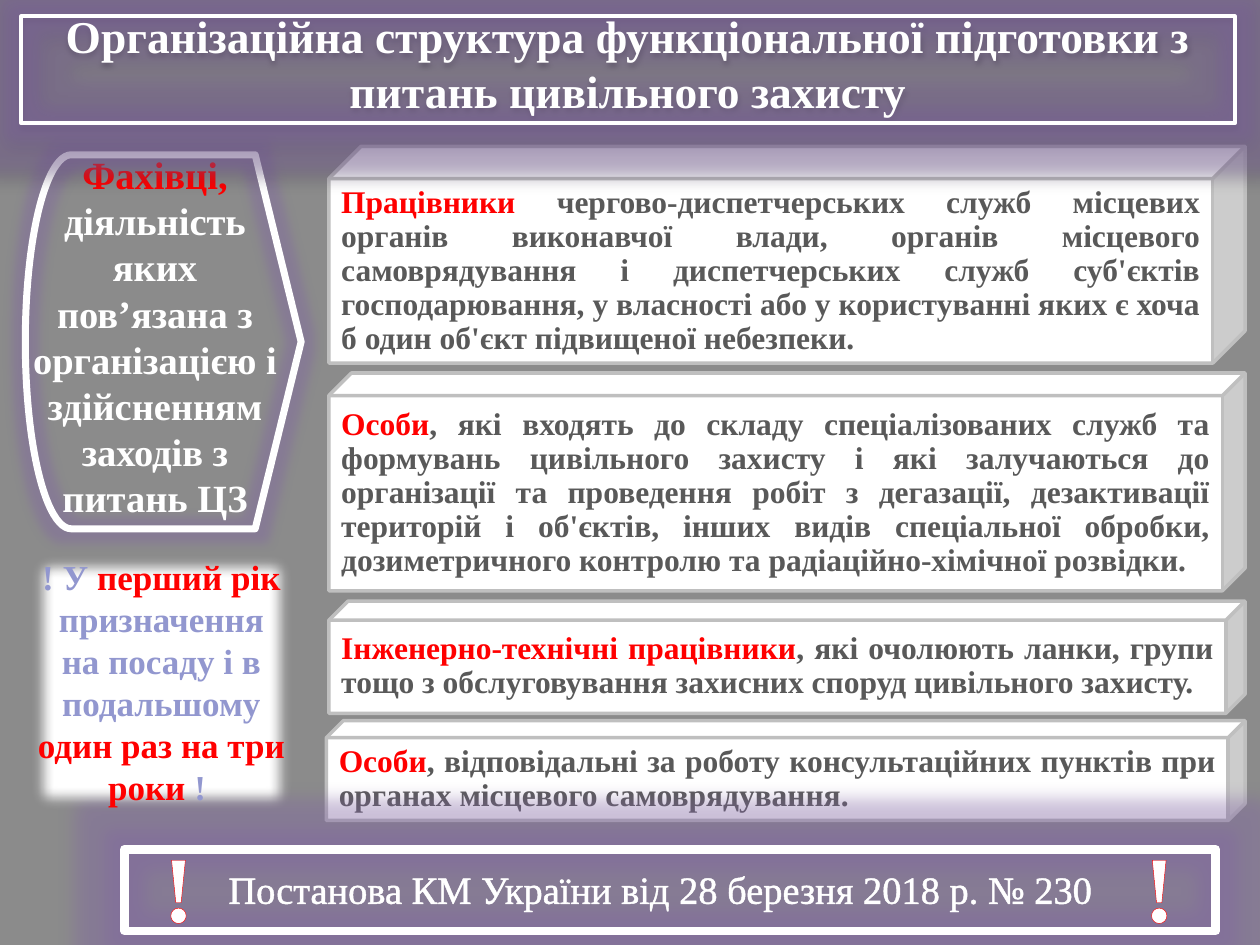
from lxml import etree
from pptx import Presentation
from pptx import util as u
from pptx.dml.color import RGBColor
from pptx.enum import shapes, text
from pptx.oxml.ns import qn

WHITE, RED, GREY, LILAC = "FFFFFF", "FF0000", "595959", "9297CF"
KIND = shapes.MSO_SHAPE
CENTER, JUSTIFY = text.PP_ALIGN.CENTER, text.PP_ALIGN.JUSTIFY
TOP, MIDDLE, BOTTOM = text.MSO_ANCHOR.TOP, text.MSO_ANCHOR.MIDDLE, text.MSO_ANCHOR.BOTTOM
color = RGBColor.from_string

deck = Presentation()
deck.slide_width, deck.slide_height = u.Cm(25.4), u.Cm(19.05)
page = deck.slides.add_slide(deck.slide_layouts[6])
page.background.fill.solid()
page.background.fill.fore_color.rgb = color("8B8B8B")


def add_box(kind, place, line, width, fill=None, effect=None, **values):
    box = page.shapes.add_shape(kind, *[u.Cm(n) for n in place])
    box.shadow.inherit = False
    if fill:
        box.fill.solid()
        box.fill.fore_color.rgb = color(fill)
    else:
        box.fill.background()
    box.line.color.rgb = color(line)
    box.line.width = u.Pt(width)
    if effect:
        effects = box._element.spPr.find(qn("a:effectLst"))
        node = etree.SubElement(effects, qn("a:" + effect), {k: str(v) for k, v in values.items()})
        if effect == "glow":
            tint = etree.SubElement(node, qn("a:srgbClr"), val="8064A2")
            etree.SubElement(tint, qn("a:alpha"), val="40000")
    return box


def write(box, runs, size, bold=True, align=CENTER, anchor=TOP, spacing=None, outline=None):
    frame = box.text_frame
    frame.word_wrap = True
    frame.vertical_anchor = anchor
    para = frame.paragraphs[0]
    para.alignment = align
    para.line_spacing = spacing
    for words, shade in runs:
        span = para.add_run()
        span.text = words
        span.font.name = "Times New Roman"
        span.font.size = u.Pt(size)
        span.font.bold = bold
        span.font.color.rgb = color(shade)
        if outline:
            edge = etree.Element(qn("a:ln"), w="12700")
            paint = etree.SubElement(edge, qn("a:solidFill"))
            etree.SubElement(paint, qn("a:srgbClr"), val=outline)
            span.font._element.insert(0, edge)


arrow = add_box(KIND.FLOWCHART_DISPLAY, (0.51, 3.12, 5.56, 7.54), WHITE, 4, effect="glow", rad=139700)
arrow.rotation = 180

groups = [
    ((6.63, 2.95, 18.47, 4.37), 0.149, "Працівники",
     " чергово-диспетчерських служб місцевих органів виконавчої влади, органів місцевого "
     "самоврядування і диспетчерських служб суб'єктів господарювання, у власності або у "
     "користуванні яких є хоча б один об'єкт підвищеної небезпеки."),
    ((6.63, 7.52, 18.47, 4.39), 0.104, "Особи",
     ", які входять до складу спеціалізованих служб та формувань цивільного захисту і які "
     "залучаються до організації та проведення робіт з дегазації, дезактивації територій і "
     "об'єктів, інших видів спеціальної обробки, дозиметричного контролю та "
     "радіаційно-хімічної розвідки."),
    ((6.63, 12.12, 18.47, 2.26), 0.17, "Інженерно-технічні працівники",
     ", які очолюють ланки, групи тощо з обслуговування захисних споруд цивільного захисту."),
    ((6.58, 14.53, 18.52, 2.01), 0.17, "Особи",
     ", відповідальні за роботу консультаційних пунктів при органах місцевого самоврядування."),
]
for place, depth, lead, rest in groups:
    cube = add_box(KIND.CUBE, place, "BFBFBF", 2, WHITE)
    cube.adjustments[0] = depth
    write(cube, [(lead, RED), (rest, GREY)], 18, align=JUSTIFY, anchor=MIDDLE, spacing=0.9)

add_box(KIND.RECTANGLE, (2.51, 17.12, 22, 1.65), WHITE, 5, effect="glow", rad=228600)

labels = [
    ((0.28, 2.92, 5.69, 7.77), 22, True, None,
     [("Фахівці, ", RED),
      ("діяльність яких пов’язана з організацією і здійсненням заходів з питань ЦЗ", WHITE)]),
    ((3.15, 17.32, 20.32, 1.19), 22, False, WHITE,
     [("Постанова КМ України від 28 березня 2018 р. № 230", WHITE)]),
    ((2.51, 16.56, 2.18, 2.57), 54, True, RED, [("!", WHITE)]),
    ((22.28, 16.56, 2.18, 2.57), 54, True, RED, [("!", WHITE)]),
]
for place, size, bold, outline, runs in labels:
    label = page.shapes.add_textbox(*[u.Cm(n) for n in place])
    write(label, runs, size, bold, outline=outline)

title = add_box(KIND.RECTANGLE, (0.43, 0.33, 24.46, 2.16), WHITE, 2.25, effect="glow", rad=228600)
effects = title._element.spPr.find(qn("a:effectLst"))
shadow = etree.SubElement(effects, qn("a:outerShdw"), blurRad="39370", dist="20320", dir="5400000")
tint = etree.SubElement(shadow, qn("a:srgbClr"), val="000000")
etree.SubElement(tint, qn("a:alpha"), val="38000")
write(title, [("Організаційна структура функціональної підготовки з питань цивільного захисту", WHITE)],
      26, anchor=BOTTOM)

note = add_box(KIND.RECTANGLE, (0.51, 11.07, 5.49, 5.38), WHITE, 0.75, WHITE, "softEdge", rad=112500)
write(note, [("! У ", LILAC), ("перший рік ", RED), ("призначення на посаду і в подальшому ", LILAC),
             ("один раз на три роки ", RED), ("! ", LILAC)], 20)

deck.save("out.pptx")
